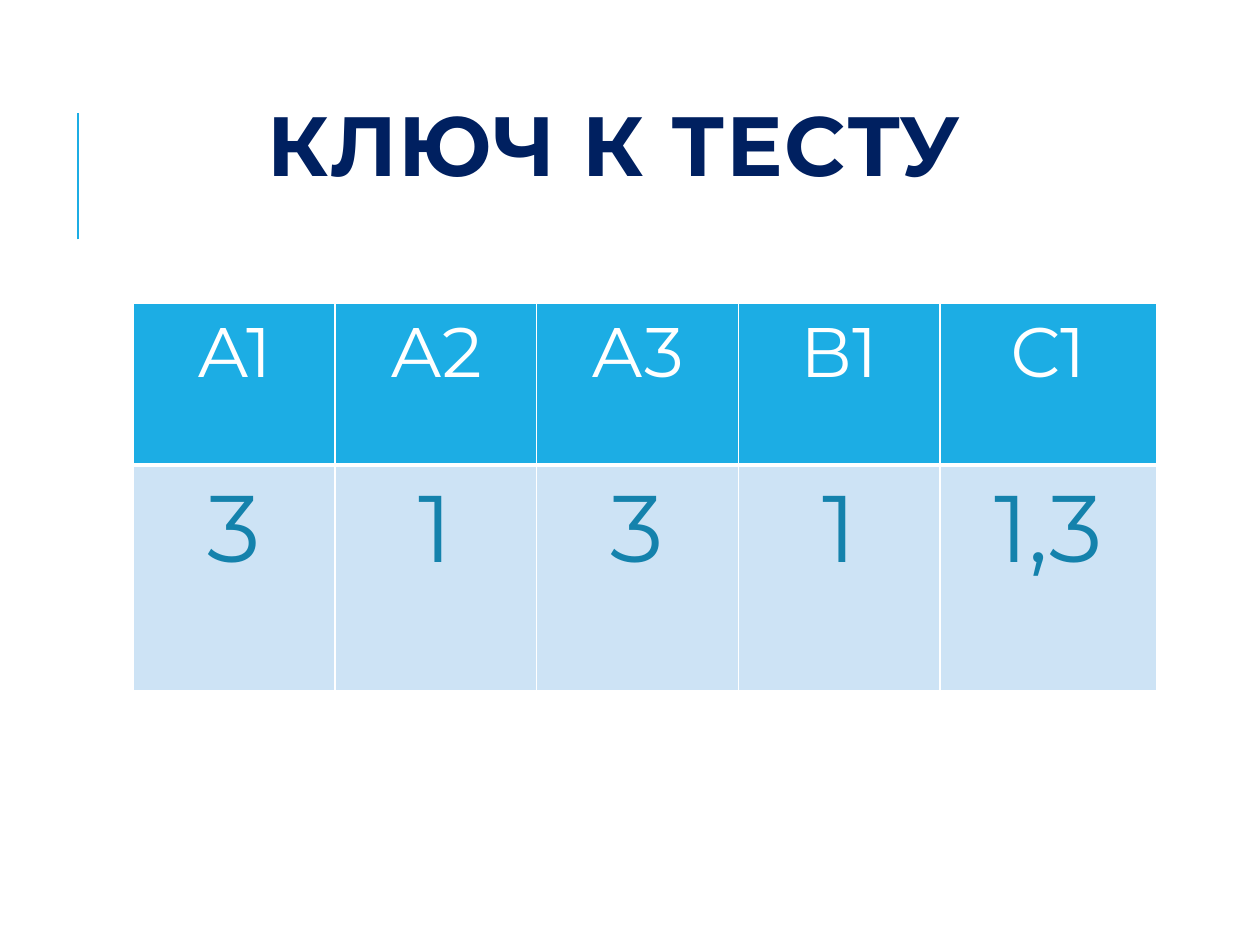
from lxml import etree
from pptx import Presentation
from pptx.dml.color import RGBColor
from pptx.enum import shapes, text
from pptx.oxml import ns
from pptx.util import Inches, Pt

FONT = "Montserrat"
NAVY = RGBColor(0x00, 0x20, 0x60)
SKY = RGBColor(0x1C, 0xAD, 0xE4)
PALE = RGBColor(0xCD, 0xE3, 0xF5)
TEAL = RGBColor(0x14, 0x82, 0xAC)
WHITE = RGBColor(0xFF, 0xFF, 0xFF)

QUESTIONS = ["А1", "А2", "А3", "В1", "С1"]
ANSWERS = ["3", "1", "3", "1", "1,3"]
COLUMN_WIDTHS = [1.6, 1.6, 1.6, 1.6, 1.72]


def write(frame, words, size, color, bold=False, line_spacing=None, tracking=None):
    """Put one centred line of formatted text into a text frame."""
    line = frame.paragraphs[0]
    line.alignment = text.PP_ALIGN.CENTER
    line.line_spacing = line_spacing
    run = line.add_run()
    run.text = words
    run.font.name = FONT
    run.font.size = Pt(size)
    run.font.bold = bold
    run.font.color.rgb = color
    if tracking:
        run.font._element.set("spc", str(int(tracking * 100)))


def add_accent(slide):
    accent = slide.shapes.add_connector(
        shapes.MSO_CONNECTOR.STRAIGHT,
        Inches(0.62), Inches(1.9), Inches(0.62), Inches(0.9))
    accent.line.color.rgb = SKY
    accent.line.width = Pt(1.5)
    etree.SubElement(accent._element.spPr, ns.qn("a:effectLst"))


def add_title(slide, words):
    title = slide.shapes.add_textbox(
        Inches(0.75), Inches(0.28), Inches(8.25), Inches(1.86))
    frame = title.text_frame
    frame.word_wrap = True
    frame.vertical_anchor = text.MSO_ANCHOR.MIDDLE
    write(frame, words, 48, NAVY, bold=True, line_spacing=0.8, tracking=1)


def set_borders(cell, bottom):
    """Draw white cell borders; the bottom one has its own width."""
    properties = cell._tc.get_or_add_tcPr()
    widths = {"lnL": 1, "lnR": 1, "lnT": 1, "lnB": bottom}
    for position, (side, width) in enumerate(widths.items()):
        border = etree.Element(ns.qn(f"a:{side}"), w=str(Pt(width)))
        fill = etree.SubElement(border, ns.qn("a:solidFill"))
        etree.SubElement(fill, ns.qn("a:srgbClr"), val=str(WHITE))
        properties.insert(position, border)


def add_answer_key(slide):
    # Words, height, fill, text size, text colour, bottom border
    rows = [
        (QUESTIONS, 1.28, SKY, 40, WHITE, 3),
        (ANSWERS, 1.79, PALE, 54, TEAL, 1),
    ]
    key = slide.shapes.add_table(
        len(rows), len(COLUMN_WIDTHS),
        Inches(1.06), Inches(2.41), Inches(8.12), Inches(3.07)).table
    for column, width in zip(key.columns, COLUMN_WIDTHS):
        column.width = Inches(width)
    for row, (words, height, fill, size, color, bottom) in zip(key.rows, rows):
        row.height = Inches(height)
        for cell, word in zip(row.cells, words):
            cell.fill.solid()
            cell.fill.fore_color.rgb = fill
            set_borders(cell, bottom)
            write(cell.text_frame, word, size, color)


def main():
    deck = Presentation()
    deck.slide_width, deck.slide_height = Inches(10), Inches(7.5)
    slide = deck.slides.add_slide(deck.slide_layouts[6])

    # Heading with its accent line
    add_accent(slide)
    add_title(slide, "КЛЮЧ К ТЕСТУ")

    # Table of answers
    add_answer_key(slide)

    deck.save("out.pptx")


if __name__ == "__main__":
    main()
